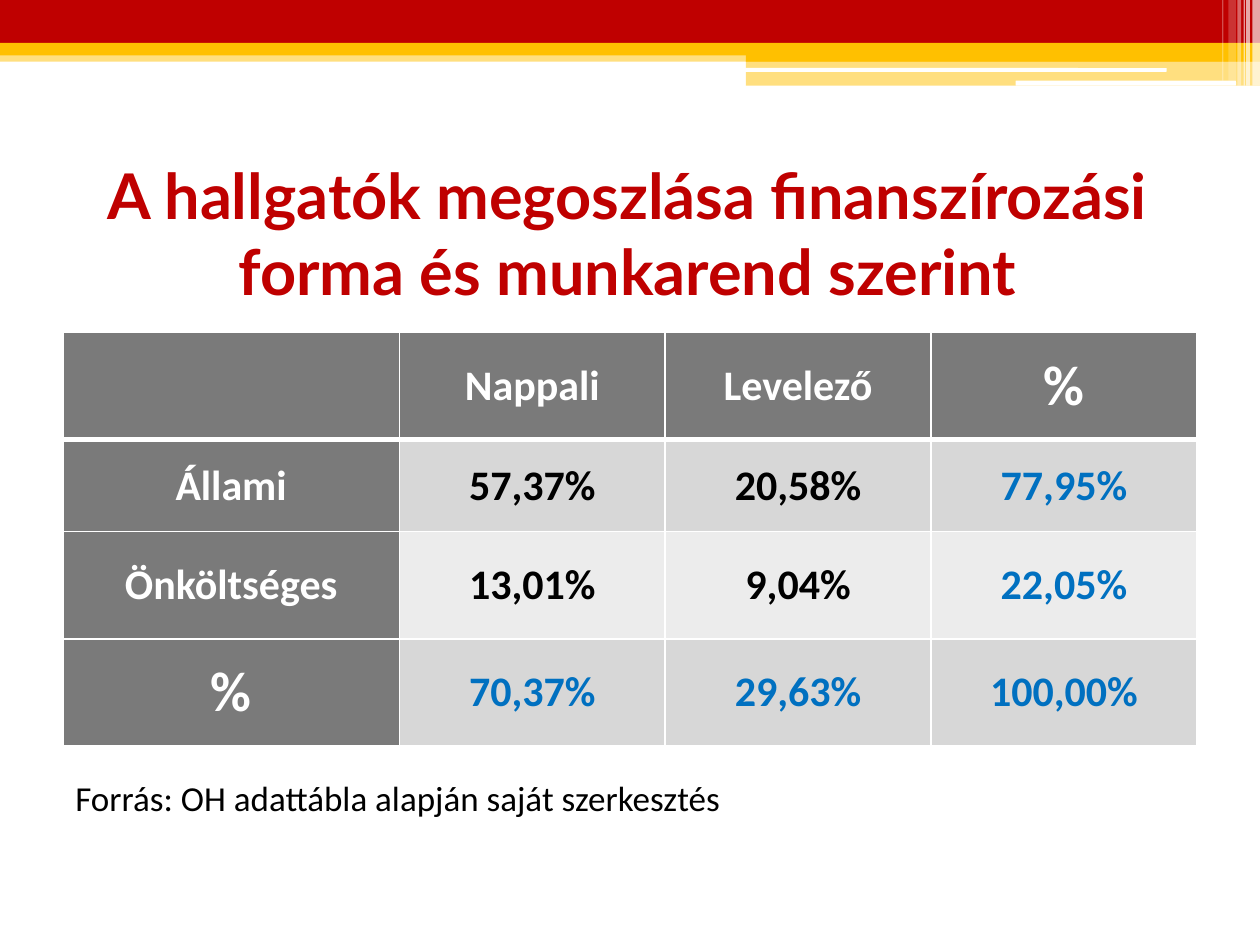
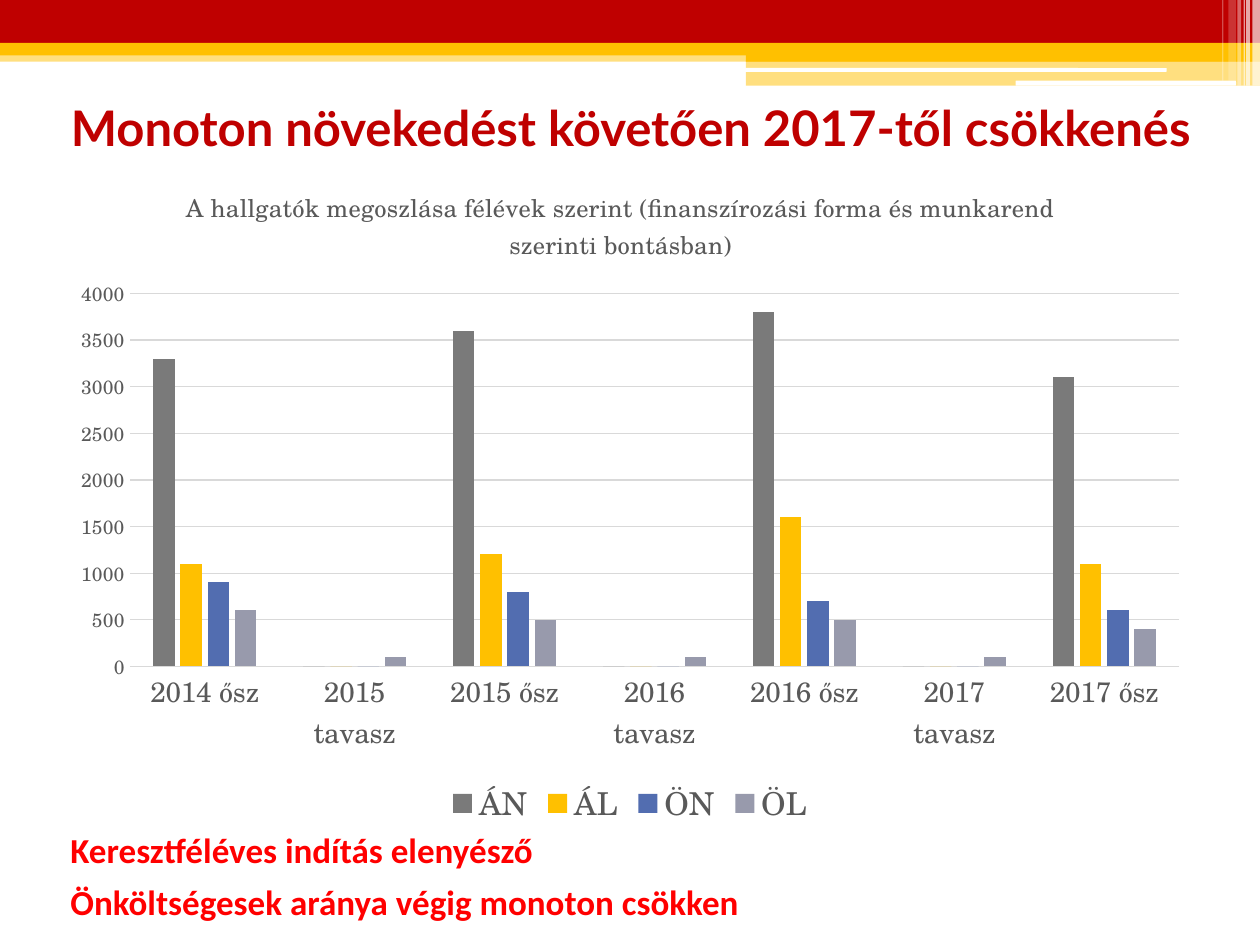
from lxml.etree import SubElement
from pptx import Presentation
from pptx.chart.data import CategoryChartData
from pptx.dml.color import RGBColor
from pptx.enum.chart import XL_CHART_TYPE, XL_LEGEND_POSITION, XL_TICK_MARK
from pptx.enum.shapes import MSO_SHAPE
from pptx.enum.text import MSO_ANCHOR, PP_ALIGN
from pptx.oxml import parse_xml
from pptx.oxml.ns import nsdecls, qn
from pptx.util import Inches, Pt

RED, GOLD, WHITE, BLACK = "BF0000", "FFC000", "FFFFFF", "000000"
GRAY, BLUE, ALERT = "7A7A7A", "0070C0", "FF0000"
CHART_TEXT, CHART_LINE = "595959", "D9D9D9"
CHART_FONT = "TeX Gyre Schola"
CHART_WIDTH, CHART_HEIGHT = 9.08, 5.35


def color(value):
    return RGBColor.from_string(value)


def add_text(page, text, place, size, font_name, font_color, bold=True,
             align=PP_ALIGN.LEFT, anchor=MSO_ANCHOR.MIDDLE, wrap=True):
    box = page.shapes.add_textbox(*map(Inches, place))
    frame = box.text_frame
    frame.word_wrap = wrap
    frame.vertical_anchor = anchor
    paragraph = frame.paragraphs[0]
    paragraph.text = text
    paragraph.alignment = align
    paragraph.font.name = font_name
    paragraph.font.size = Pt(size)
    paragraph.font.bold = bold
    paragraph.font.color.rgb = color(font_color)


deck = Presentation()
deck.slide_width, deck.slide_height = Inches(10), Inches(7.5)
pages = [deck.slides.add_slide(deck.slide_layouts[6]) for _ in range(2)]

rectangle, rounded = MSO_SHAPE.RECTANGLE, MSO_SHAPE.ROUNDED_RECTANGLE
bands = [
    (rectangle, (0, 0.4, 10, 0.09), GOLD, 50),
    (rectangle, (0, 0, 10, 0.34), RED, 100),
    (rectangle, (0, 0.34, 10, 0.1), GOLD, 100),
    (rectangle, (5.92, 0.39, 4.08, 0.1), GOLD, 100),
    (rectangle, (5.92, 0.48, 4.08, 0.2), GOLD, 50),
    (rounded, (5.91, 0.54, 3.35, 0.03), WHITE, 100),
    (rounded, (8.06, 0.64, 1.75, 0.04), WHITE, 100),
]
stripes = [(9.94, 0.06, 0.68, 65), (9.89, 0.03, 0.68, 65), (9.87, 0.01, 0.68, 60),
           (9.82, 0.03, 0.68, 40), (9.75, 0.06, 0.64, 20), (9.7, 0.01, 0.64, 30)]
bands += [(rectangle, (left, 0, width, height), WHITE, opacity)
          for left, width, height, opacity in stripes]

titles = [
    ("A hallgatók megoszlása finanszírozási forma és munkarend szerint",
     (0.48, 1.26, 9, 1.17), 36),
    ("Monoton növekedést követően 2017-től csökkenés", (0.28, 0.74, 9.45, 0.53), 28),
]
for page, (title, place, size) in zip(pages, titles):
    for preset, band_place, band_color, opacity in bands:
        band = page.shapes.add_shape(preset, *map(Inches, band_place))
        band.shadow.inherit = False
        band.line.fill.background()
        band.fill.solid()
        band.fill.fore_color.rgb = color(band_color)
        if opacity < 100:
            tint = band.fill._xPr.find(qn("a:solidFill"))[0]
            SubElement(tint, qn("a:alpha"), val=str(opacity * 1000))
    add_text(page, title, place, size, "Lato", RED, align=PP_ALIGN.CENTER)

table_page, chart_page = pages

rows = [
    ["", "Nappali", "Levelező", "%"],
    ["Állami", "57,37%", "20,58%", "77,95%"],
    ["Önköltséges", "13,01%", "9,04%", "22,05%"],
    ["%", "70,37%", "29,63%", "100,00%"],
]
table = table_page.shapes.add_table(
    4, 4, Inches(0.5), Inches(2.64), Inches(9), Inches(3.28)).table
for column, width in zip(table.columns, [2.67, 2.11, 2.11, 2.11]):
    column.width = Inches(width)
for row, height in zip(table.rows, [0.85, 0.73, 0.85, 0.85]):
    row.height = Inches(height)

for row_index, values in enumerate(rows):
    for column_index, value in enumerate(values):
        cell = table.cell(row_index, column_index)
        heading = row_index == 0 or column_index == 0
        total = row_index == 3 or column_index == 3
        for side in "LRTB":
            thick = (row_index, side) in [(0, "B"), (1, "T")]
            cell._tc.get_or_add_tcPr().append(parse_xml(
                f'<a:ln{side} {nsdecls("a")} w="{Pt(3 if thick else 1)}">'
                f'<a:solidFill><a:srgbClr val="{WHITE}"/></a:solidFill></a:ln{side}>'))
        cell.fill.solid()
        cell.fill.fore_color.rgb = color(
            GRAY if heading else "D7D7D7" if row_index % 2 else "ECECEC")
        cell.margin_left = cell.margin_right = Inches(0.07)
        cell.margin_top = cell.margin_bottom = 0
        cell.vertical_anchor = MSO_ANCHOR.MIDDLE
        paragraph = cell.text_frame.paragraphs[0]
        paragraph.text = value
        paragraph.alignment = PP_ALIGN.CENTER
        paragraph.font.name = "Calibri"
        paragraph.font.size = Pt(32 if value == "%" else 24)
        paragraph.font.bold = True
        paragraph.font.color.rgb = color(WHITE if heading else BLUE if total else BLACK)

add_text(table_page, "Forrás: OH adattábla alapján saját szerkesztés",
         (0.5, 6.11, 9, 0.44), 20, "Calibri", BLACK, bold=False)

series_list = [
    ("ÁN", GRAY, [3300, 0, 3600, 0, 3800, 0, 3100]),
    ("ÁL", GOLD, [1100, 0, 1200, 0, 1600, 0, 1100]),
    ("ÖN", "526DB0", [900, 0, 800, 0, 700, 0, 600]),
    ("ÖL", "989AAC", [600, 100, 500, 100, 500, 100, 400]),
]
data = CategoryChartData()
data.categories = ["2014 ősz", "2015 tavasz", "2015 ősz", "2016 tavasz",
                   "2016 ősz", "2017 tavasz", "2017 ősz"]
for name, _, values in series_list:
    data.add_series(name, values)
chart = chart_page.shapes.add_chart(
    XL_CHART_TYPE.COLUMN_CLUSTERED, Inches(0.46), Inches(1.26),
    Inches(CHART_WIDTH), Inches(CHART_HEIGHT), data).chart

plot = chart.plots[0]
plot.gap_width, plot.overlap = 219, -27
plot.vary_by_categories = False
for series, (_, series_color, _) in zip(plot.series, series_list):
    series.format.fill.solid()
    series.format.fill.fore_color.rgb = color(series_color)

chart.has_title = True
chart_title = chart.chart_title.text_frame
chart_title.text = ("A hallgatók megoszlása félévek szerint "
                    "(finanszírozási forma és munkarend szerinti bontásban)")
chart.chart_title.include_in_layout = False
chart.has_legend = True
chart.legend.position = XL_LEGEND_POSITION.BOTTOM
chart.legend.include_in_layout = False
category_axis, value_axis = chart.category_axis, chart.value_axis
value_axis.minimum_scale, value_axis.maximum_scale = 0, 4000
value_axis.major_unit = 500
for axis in (category_axis, value_axis):
    axis.major_tick_mark = axis.minor_tick_mark = XL_TICK_MARK.NONE
value_axis.format.line.fill.background()
for line in (category_axis.format.line, value_axis.major_gridlines.format.line):
    line.color.rgb = color(CHART_LINE)
    line.width = Pt(0.75)

chart_fonts = [(chart.font, 10), (chart_title.paragraphs[0].font, 14),
               (category_axis.tick_labels.font, 16),
               (value_axis.tick_labels.font, 11), (chart.legend.font, 18)]
for font, size in chart_fonts:
    font.name = CHART_FONT
    font.size = Pt(size)
    font.bold = False
    font.color.rgb = color(CHART_TEXT)

chart_xml = chart._chartSpace.chart
layouts = [
    (chart_xml.plotArea, 0, [("layoutTarget", "inner")],
     [("x", 0.57 / CHART_WIDTH), ("y", 1.07 / CHART_HEIGHT),
      ("w", 8.33 / CHART_WIDTH), ("h", 2.96 / CHART_HEIGHT)]),
    (chart_xml.find(qn("c:title")), 1, [],
     [("x", 0.98 / CHART_WIDTH), ("y", 0.18 / CHART_HEIGHT)]),
]
for parent, position, target, fractions in layouts:
    for old_layout in parent.findall(qn("c:layout")):
        parent.remove(old_layout)
    layout = SubElement(parent, qn("c:layout"))
    parent.insert(position, layout)
    manual = SubElement(layout, qn("c:manualLayout"))
    for tag, value in target + [("xMode", "edge"), ("yMode", "edge")] + fractions:
        SubElement(manual, qn(f"c:{tag}"), val=str(value))

remarks = [("Keresztféléves indítás elenyésző", 6.53, 3.92),
           ("Önköltségesek aránya végig monoton csökken", 6.94, 5.55)]
for remark, top, width in remarks:
    add_text(chart_page, remark, (0.46, top, width, 0.44), 20, "Calibri", ALERT,
             anchor=MSO_ANCHOR.TOP, wrap=False)

deck.save("out.pptx")
